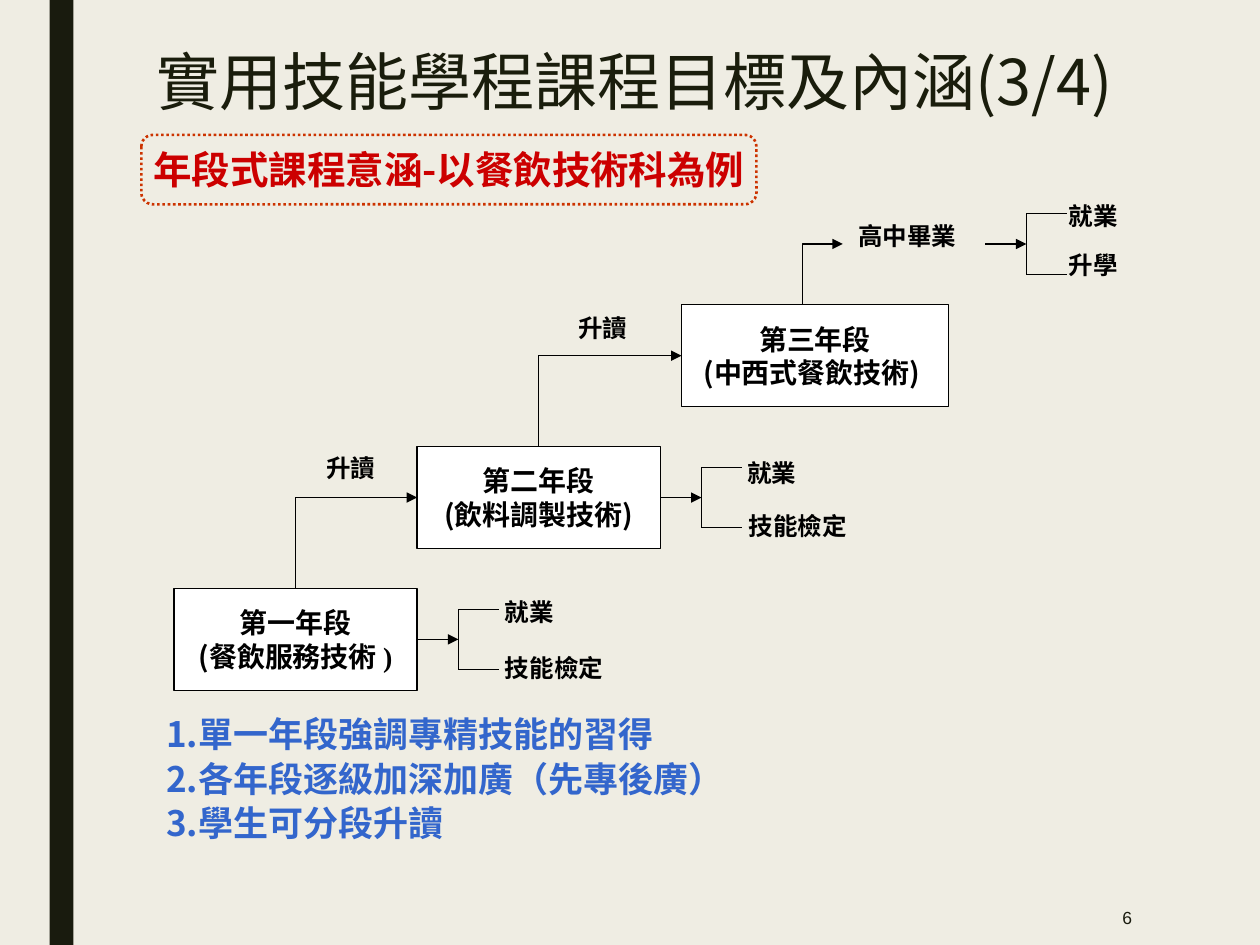
from lxml import etree
from pptx import Presentation
from pptx.dml.color import RGBColor
from pptx.enum import dml, shapes, text
from pptx.oxml.ns import qn
from pptx.util import Cm, Pt

PAPER = RGBColor(0xEF, 0xED, 0xE3)
RAIL = RGBColor(0x19, 0x1B, 0x0E)
INK = RGBColor(0x1A, 0x1D, 0x0C)
BLACK = RGBColor(0, 0, 0)
WHITE = RGBColor(0xFF, 0xFF, 0xFF)
RED = RGBColor(0xCC, 0, 0)
BORDER = RGBColor(0xCC, 0x33, 0)
BLUE = RGBColor(0x33, 0x66, 0xCC)
SANS, SERIF = "Noto Sans CJK SC", "Times New Roman"
LEFT, CENTER, RIGHT = text.PP_ALIGN.LEFT, text.PP_ALIGN.CENTER, text.PP_ALIGN.RIGHT
TOP, MIDDLE = text.MSO_ANCHOR.TOP, text.MSO_ANCHOR.MIDDLE
STEP_WIDTH, STEP_HEIGHT = 4.9, 2.06
ARROW, HALF_FORK, PRONG = 0.83, 0.61, 0.82


def style_run(run, size, color, font=SANS, bold=True):
    """Format a run, using the sans face for East Asian glyphs."""
    run.font.size, run.font.bold, run.font.name = Pt(size), bold, font
    run.font.color.rgb = color
    etree.SubElement(run.font._element, qn("a:ea")).set("typeface", SANS)


def write(shape, lines, size, color, font=SANS, bold=True, align=LEFT, anchor=TOP, wrap=True):
    """Write lines into a shape and return its text frame."""
    frame = shape.text_frame
    frame.text = "\n".join(lines)
    frame.word_wrap, frame.vertical_anchor = wrap, anchor
    for paragraph in frame.paragraphs:
        paragraph.alignment = align
        for run in paragraph.runs:
            style_run(run, size, color, font, bold)
    return frame


def add_text(slide, box, lines, size, color, **style):
    """Add a text box at a box given in centimetres."""
    return write(slide.shapes.add_textbox(*map(Cm, box)), lines, size, color, **style)


def add_block(slide, box, kind=shapes.MSO_SHAPE.RECTANGLE, fill=None, line=None, width=0.75):
    """Add a preset shape with a flat fill and outline."""
    block = slide.shapes.add_shape(kind, *map(Cm, box))
    block.shadow.inherit = False
    if fill is None:
        block.fill.background()
    else:
        block.fill.solid()
        block.fill.fore_color.rgb = fill
    if line is None:
        block.line.fill.background()
    else:
        block.line.color.rgb, block.line.width = line, Pt(width)
    return block


def add_line(slide, start, end, arrow=False, kind=shapes.MSO_CONNECTOR.STRAIGHT):
    """Add a thin black connector, with an arrowhead on request."""
    line = slide.shapes.add_connector(kind, *map(Cm, start + end))
    line.line.color.rgb, line.line.width = BLACK, Pt(0.75)
    if arrow:
        etree.SubElement(line.line._get_or_add_ln(), qn("a:tailEnd")).set("type", "triangle")
    etree.SubElement(line._element.spPr, qn("a:effectLst"))
    return line


def add_riser(slide, lower, upper):
    """Lead an arrow up from the lower step and right into the upper one."""
    riser = add_line(slide, (0, 0), (1, 1), True, shapes.MSO_CONNECTOR.ELBOW)
    riser.begin_connect(lower, 0)
    riser.end_connect(upper, 1)
    x, y = lower.left + lower.width // 2, upper.top + upper.height // 2
    run, rise = upper.left - x, lower.top - y
    riser.left, riser.top = x + (run - rise) // 2, y + (rise - run) // 2
    riser.width, riser.height = rise, run
    properties = riser._element.spPr
    properties.find(qn("a:prstGeom")).set("prst", "bentConnector2")
    transform = properties.find(qn("a:xfrm"))
    transform.attrib.pop("flipV", None)
    transform.set("rot", "16200000")


def add_step(slide, box, lines):
    """Add one stage of the staircase."""
    step = add_block(slide, box, fill=WHITE, line=BLACK)
    write(step, lines, 16, BLACK, align=CENTER, anchor=MIDDLE)
    return step


def add_fork(slide, x, y, outcomes, anchor=TOP, source=None):
    """Add an arrow from (x, y) that splits into two labelled outcomes."""
    trunk = x + ARROW
    stem = add_line(slide, (x, y), (trunk, y), True)
    if source is not None:
        stem.begin_connect(source, 3)
    add_line(slide, (trunk, y - HALF_FORK), (trunk, y + HALF_FORK))
    for side, (label, dx, dy) in zip((-1, 1), outcomes):
        level = y + side * HALF_FORK
        add_line(slide, (trunk, level), (trunk + PRONG, level))
        add_text(slide, (trunk + dx, y + dy, 2.77, 1.02), [label], 14, BLACK,
                 font=SERIF, anchor=anchor)


def add_staircase(slide, x, y):
    """Build the three-stage diagram from the top left of its first step."""
    first = add_step(slide, (x, y, STEP_WIDTH, STEP_HEIGHT), ["第一年段", "(餐飲服務技術 "])
    bracket = first.text_frame.paragraphs[1].add_run()
    bracket.text = ")"
    style_run(bracket, 16, BLACK, SERIF)
    second = add_step(slide, (x + 4.9, y - 2.86, STEP_WIDTH, STEP_HEIGHT),
                      ["第二年段", "(飲料調製技術)"])
    third = add_step(slide, (x + 10.23, y - 5.72, 5.38, STEP_HEIGHT),
                     ["第三年段", "(中西式餐飲技術) "])
    add_riser(slide, first, second)
    add_riser(slide, second, third)
    add_line(slide, (x + 11.86, y - 5.72), (x + 13.48, y - 6.94), True,
             shapes.MSO_CONNECTOR.ELBOW)
    for dx, dy in ((2.62, -2.97), (7.7, -5.79)):
        add_text(slide, (x + dx, y + dy, 1.88, 1.07), ["升讀"], 14, BLACK,
                 font=SERIF, align=CENTER, anchor=MIDDLE)
    add_text(slide, (x + 13.54, y - 7.52, 3.02, 1.02), ["高中畢業"], 14, BLACK, font=SERIF)
    middle = y + STEP_HEIGHT / 2
    add_fork(slide, x + 4.9, middle,
             [("就業", 0.69, -1.06), ("技能檢定", 0.69, 0.06)], MIDDLE, first)
    add_fork(slide, x + 9.8, middle - 2.86,
             [("就業", 0.67, -0.92), ("技能檢定", 0.7, 0.15)], source=second)
    add_fork(slide, x + 16.35, y - 6.94, [("就業", 0.61, -0.99), ("升學", 0.61, 0)])


def add_heading(slide, x, y):
    """Add the shadowed title and the dotted subtitle frame."""
    title = add_text(slide, (x, y, 22.5, 2.57), ["實用技能學程課程目標及內涵(3/4)"], 36, INK,
                     bold=False, anchor=MIDDLE)
    properties = title.paragraphs[0].runs[0].font._element
    effects = etree.Element(qn("a:effectLst"))
    properties.find(qn("a:solidFill")).addnext(effects)
    shadow = etree.SubElement(effects, qn("a:outerShdw"), dist="35921", dir="2700000")
    etree.SubElement(shadow, qn("a:srgbClr"), val=str(WHITE))
    frame = add_block(slide, (x - 0.05, y + 2.39, 12.4, 1.4),
                      shapes.MSO_SHAPE.ROUNDED_RECTANGLE, line=BORDER, width=1.5)
    frame.line.dash_style = dml.MSO_LINE.ROUND_DOT
    write(frame, ["年段式課程意涵-以餐飲技術科為例"], 22, RED,
          align=CENTER, anchor=MIDDLE, wrap=False)


def add_summary(slide, box):
    """Add the numbered points with a hanging indent."""
    points = ["1.單一年段強調專精技能的習得", "2.各年段逐級加深加廣（先專後廣）", "3.學生可分段升讀"]
    frame = add_text(slide, box, points, 20, BLUE)
    for index, paragraph in enumerate(frame.paragraphs):
        paragraph.line_spacing = 0.9
        paragraph.space_before = Pt(4 if index else 0)
        indent = paragraph._p.get_or_add_pPr()
        indent.set("marL", str(Cm(1.7)))
        indent.set("indent", str(-Cm(1.7)))


def main():
    """Build the slide and save it."""
    deck = Presentation()
    deck.slide_width, deck.slide_height = Cm(25.4), Cm(19.05)
    slide = deck.slides.add_slide(deck.slide_layouts[6])
    slide.background.fill.solid()
    slide.background.fill.fore_color.rgb = PAPER
    add_block(slide, (1, 0, 0.48, 19.05), fill=RAIL)
    add_text(slide, (19.74, 17.93, 3.33, 1.12), ["6"], 10, RAIL, font="Arial",
             bold=False, align=RIGHT, anchor=MIDDLE)
    add_summary(slide, (3.1, 14.33, 11.91, 3))
    add_staircase(slide, 3.51, 11.86)
    add_heading(slide, 2.9, 0.33)
    deck.save("out.pptx")


if __name__ == "__main__":
    main()
